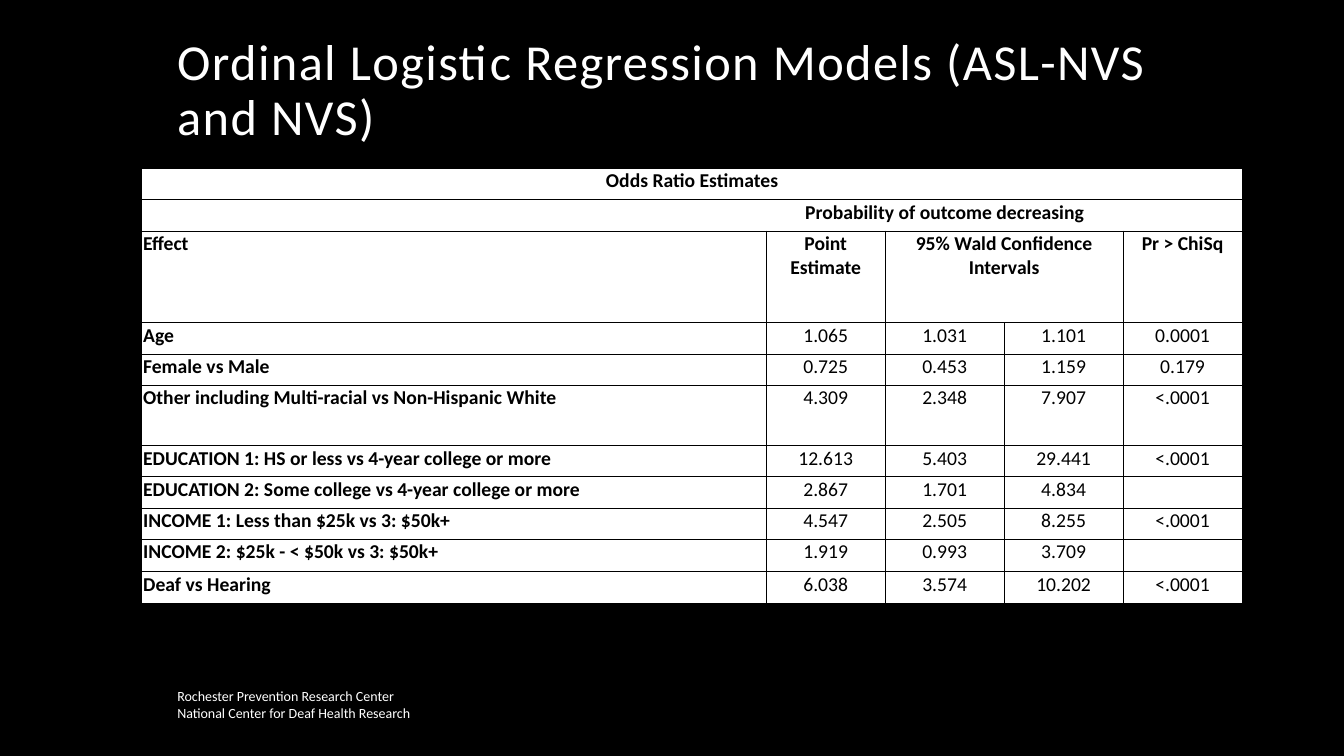
from lxml.etree import SubElement
from pptx import Presentation
from pptx.dml.color import RGBColor
from pptx.enum.text import MSO_ANCHOR as Anchor, PP_ALIGN as Align
from pptx.oxml.ns import qn
from pptx.util import Inches, Pt

COLORS = {"black": "000000", "white": "FFFFFF"}
FONT = "Calibri"

COLUMN_WIDTHS = [6.19] + [1.18] * 4
TALL_ROWS = {2: 0.6, 6: 0.6, 10: 0.32, 11: 0.32}
ROW_HEIGHT = 0.31
HEADER_ROWS = 4
MERGES = [((0, 0), (0, 4)), ((1, 1), (1, 3)), ((2, 0), (3, 0)),
          ((2, 2), (3, 3)), ((2, 4), (3, 4))]
ODDS_RATIOS = [
    ["Odds Ratio Estimates", "", "", "", ""],
    ["", "Probability of outcome decreasing", "", "", ""],
    ["Effect", "Point Estimate", "95% Wald Confidence Intervals", "", "Pr > ChiSq"],
    ["", "", "", "", ""],
    ["Age", "1.065", "1.031", "1.101", "0.0001"],
    ["Female vs Male", "0.725", "0.453", "1.159", "0.179"],
    ["Other including Multi-racial vs Non-Hispanic White",
     "4.309", "2.348", "7.907", "<.0001"],
    ["EDUCATION 1: HS or less vs 4-year college or more",
     "12.613", "5.403", "29.441", "<.0001"],
    ["EDUCATION 2: Some college vs 4-year college or more",
     "2.867", "1.701", "4.834", ""],
    ["INCOME 1: Less than $25k vs 3: $50k+", "4.547", "2.505", "8.255", "<.0001"],
    ["INCOME 2: $25k - < $50k vs 3: $50k+", "1.919", "0.993", "3.709", ""],
    ["Deaf vs Hearing", "6.038", "3.574", "10.202", "<.0001"],
]


def color(name):
    return RGBColor.from_string(COLORS[name])


def write(frame, text, size=14, ink="black", bold=False, align=Align.LEFT,
          line_spacing=None, tracking=None):
    """Fill a text frame, one paragraph for each line of text."""
    for index, line in enumerate(text.split("\n")):
        para = frame.paragraphs[0] if index == 0 else frame.add_paragraph()
        para.alignment = align
        if line_spacing:
            para.line_spacing = line_spacing
        span = para.add_run()
        span.text = line
        span.font.name = FONT
        span.font.size = Pt(size)
        span.font.bold = bold
        span.font.color.rgb = color(ink)
        if tracking:
            span.font._element.set("spc", str(int(tracking * 100)))


def border_widths(row, col):
    """Line width in points for each side of a cell; 0 means no line."""
    last_row, last_col = len(ODDS_RATIOS) - 1, len(COLUMN_WIDTHS) - 1
    has_columns = row >= 2
    return {
        "lnL": 0.5 if has_columns and col > 0 else 0,
        "lnR": 0.5 if has_columns and col < last_col else 0,
        "lnT": 1 if row == 0 else 0 if (row, col) == (3, 1) else 0.5,
        "lnB": 1 if row == last_row else 0 if (row, col) == (2, 1) else 0.5,
    }


class SlideBuilder:
    def __init__(self, page):
        self.page = page

    def background(self, name):
        fill = self.page.background.fill
        fill.solid()
        fill.fore_color.rgb = color(name)

    def text(self, left, top, width, height, text, anchor, **style):
        box = self.page.shapes.add_textbox(
            Inches(left), Inches(top), Inches(width), Inches(height))
        frame = box.text_frame
        frame.word_wrap = True
        frame.vertical_anchor = anchor
        write(frame, text, ink="white", **style)

    def table(self, left, top, rows):
        heights = [TALL_ROWS.get(row, ROW_HEIGHT) for row in range(len(rows))]
        table = self.page.shapes.add_table(
            len(rows), len(COLUMN_WIDTHS), Inches(left), Inches(top),
            Inches(sum(COLUMN_WIDTHS)), Inches(sum(heights))).table
        table.first_row = table.horz_banding = False
        for column, width in zip(table.columns, COLUMN_WIDTHS):
            column.width = Inches(width)
        for row, height in zip(table.rows, heights):
            row.height = Inches(height)
        for row, texts in enumerate(rows):
            for col, text in enumerate(texts):
                self.cell(table.cell(row, col), row, col, text)
        for first, last in MERGES:
            table.cell(*first).merge(table.cell(*last))

    def cell(self, cell, row, col, text):
        cell.margin_left = cell.margin_right = cell.margin_top = Inches(0.01)
        cell.margin_bottom = 0
        left_aligned = col == 0 and row > 0
        write(cell.text_frame, text, bold=row < HEADER_ROWS or col == 0,
              align=Align.LEFT if left_aligned else Align.CENTER)
        self.borders(cell, border_widths(row, col))
        cell.fill.solid()
        cell.fill.fore_color.rgb = color("white")

    def borders(self, cell, widths):
        properties = cell._tc.get_or_add_tcPr()
        for side, width in widths.items():
            line = SubElement(properties, qn(f"a:{side}"), w=str(Pt(width)))
            if width:
                fill = SubElement(line, qn("a:solidFill"))
                SubElement(fill, qn("a:srgbClr"), val=COLORS["black"])
            else:
                SubElement(line, qn("a:noFill"))


def main():
    deck = Presentation()
    deck.slide_width, deck.slide_height = Inches(13.33), Inches(7.5)
    slide = SlideBuilder(deck.slides.add_slide(deck.slide_layouts[6]))
    slide.background("black")
    slide.text(1.66, 0, 10, 1.5, "Ordinal Logistic Regression Models (ASL-NVS and NVS)",
               Anchor.BOTTOM, size=36, line_spacing=0.9, tracking=1)
    slide.table(1.41, 1.67, ODDS_RATIOS)
    slide.text(1.66, 6.67, 3.58, 0.64,
               "Rochester Prevention Research Center\nNational Center for Deaf Health Research",
               Anchor.MIDDLE, size=10)
    deck.save("out.pptx")


if __name__ == "__main__":
    main()
